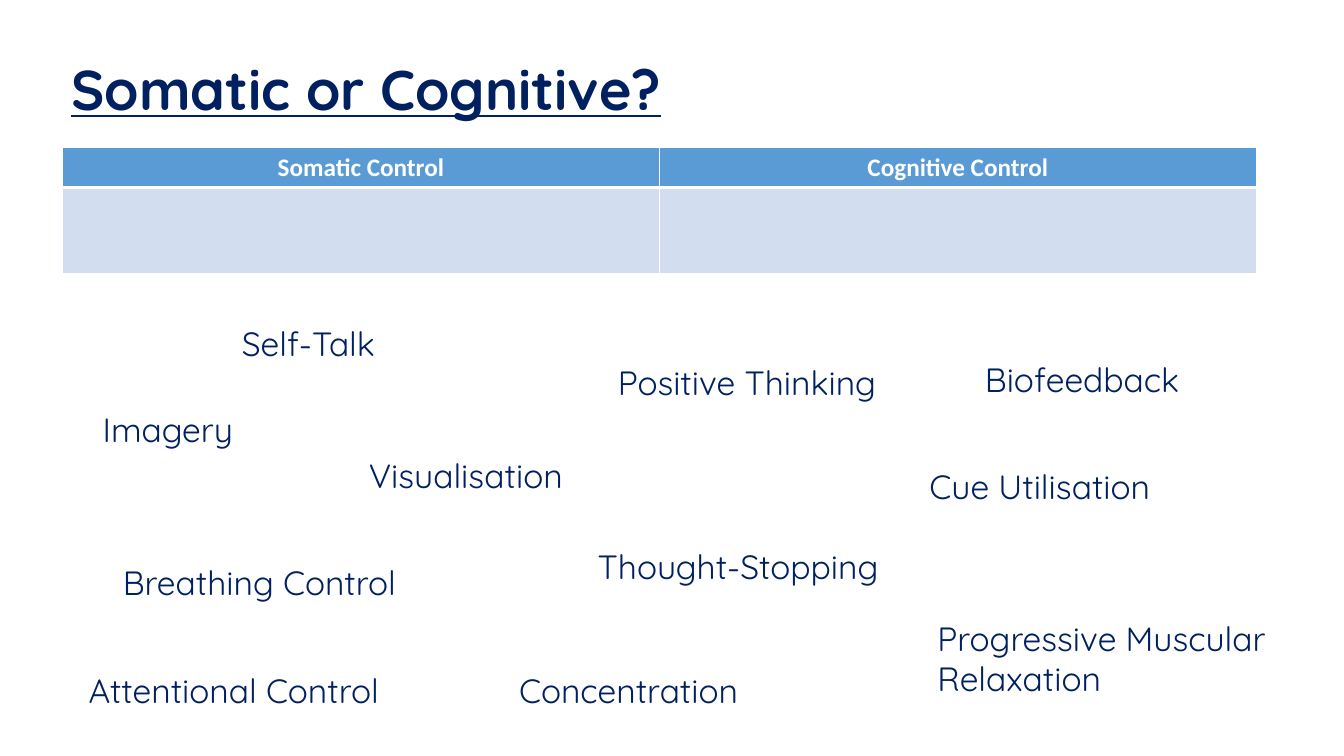
from dataclasses import dataclass

from lxml import etree
from pptx import Presentation
from pptx.dml.color import RGBColor
from pptx.enum import text as enums
from pptx.oxml import ns
from pptx.util import Pt

PX = 9144
NAVY = RGBColor(0x00, 0x20, 0x60)
WHITE = RGBColor(0xFF, 0xFF, 0xFF)
BLUE = RGBColor(0x5B, 0x9B, 0xD5)
PALE = RGBColor(0xD2, 0xDE, 0xEF)

TERM = {"name": "Quicksand", "size": Pt(24)}
TITLE = {"name": "Quicksand", "size": Pt(40), "bold": True, "underline": True}
HEAD = {"name": "Calibri", "size": Pt(18), "bold": True}


@dataclass(frozen=True)
class Label:
    words: str
    left: int
    top: int
    width: int
    height: int = 50


@dataclass(frozen=True)
class Row:
    words: tuple[str, str]
    height: int
    fill: RGBColor
    edges: dict[str, int]


HEADING = Label("Somatic or Cognitive?", 61, 19, 1150, 145)
TERMS = (
    Label("Imagery", 92, 401, 298),
    Label("Visualisation", 356, 446, 298),
    Label("Attentional Control", 78, 660, 427),
    Label("Cue Utilisation", 912, 457, 298),
    Label("Thought-Stopping", 583, 537, 453),
    Label("Self-Talk", 230, 315, 298),
    Label("Concentration", 505, 660, 298),
    Label("Breathing Control", 112, 553, 400),
    Label("Progressive Muscular Relaxation", 920, 608, 413, 91),
    Label("Positive Thinking", 603, 354, 453),
    Label("Biofeedback", 967, 351, 298),
)
ROWS = (
    Row(("Somatic Control", "Cognitive Control"), 40, BLUE,
        {"lnL": 1, "lnR": 1, "lnT": 1, "lnB": 3}),
    Row(("", ""), 85, PALE, {"lnL": 1, "lnR": 1, "lnT": 3, "lnB": 1}),
)


def style(font, form: dict, color: RGBColor) -> None:
    for key, value in form.items():
        setattr(font, key, value)
    font.color.rgb = color


def write(slide, label: Label, form: dict):
    box = slide.shapes.add_textbox(
        label.left * PX, label.top * PX, label.width * PX, label.height * PX)
    frame = box.text_frame
    frame.word_wrap = True
    frame.text = label.words
    style(frame.paragraphs[0].runs[0].font, form, NAVY)
    return frame


def edge(cell, edges: dict[str, int]) -> None:
    props = cell._tc.get_or_add_tcPr()
    for side, width in edges.items():
        line = etree.SubElement(props, ns.qn(f"a:{side}"), w=str(Pt(width)))
        solid = etree.SubElement(line, ns.qn("a:solidFill"))
        etree.SubElement(solid, ns.qn("a:srgbClr"), val=str(WHITE))


def chart(slide) -> None:
    total = sum(row.height for row in ROWS)
    table = slide.shapes.add_table(
        len(ROWS), 2, 62 * PX, 146 * PX, 1184 * PX, total * PX).table
    for i, row in enumerate(ROWS):
        table.rows[i].height = row.height * PX
        for cell, words in zip(table.rows[i].cells, row.words):
            edge(cell, row.edges)
            cell.fill.solid()
            cell.fill.fore_color.rgb = row.fill
            if words:
                cell.text = words
                para = cell.text_frame.paragraphs[0]
                para.alignment = enums.PP_ALIGN.CENTER
                style(para.runs[0].font, HEAD, WHITE)


def main() -> None:
    deck = Presentation()
    deck.slide_width, deck.slide_height = 1333 * PX, 750 * PX
    slide = deck.slides.add_slide(deck.slide_layouts[6])
    frame = write(slide, HEADING, TITLE)
    frame.vertical_anchor = enums.MSO_ANCHOR.MIDDLE
    frame.paragraphs[0].line_spacing = 0.9
    chart(slide)
    for label in TERMS:
        frame = write(slide, label, TERM)
        frame.auto_size = enums.MSO_AUTO_SIZE.SHAPE_TO_FIT_TEXT
    deck.save("out.pptx")


if __name__ == "__main__":
    main()
